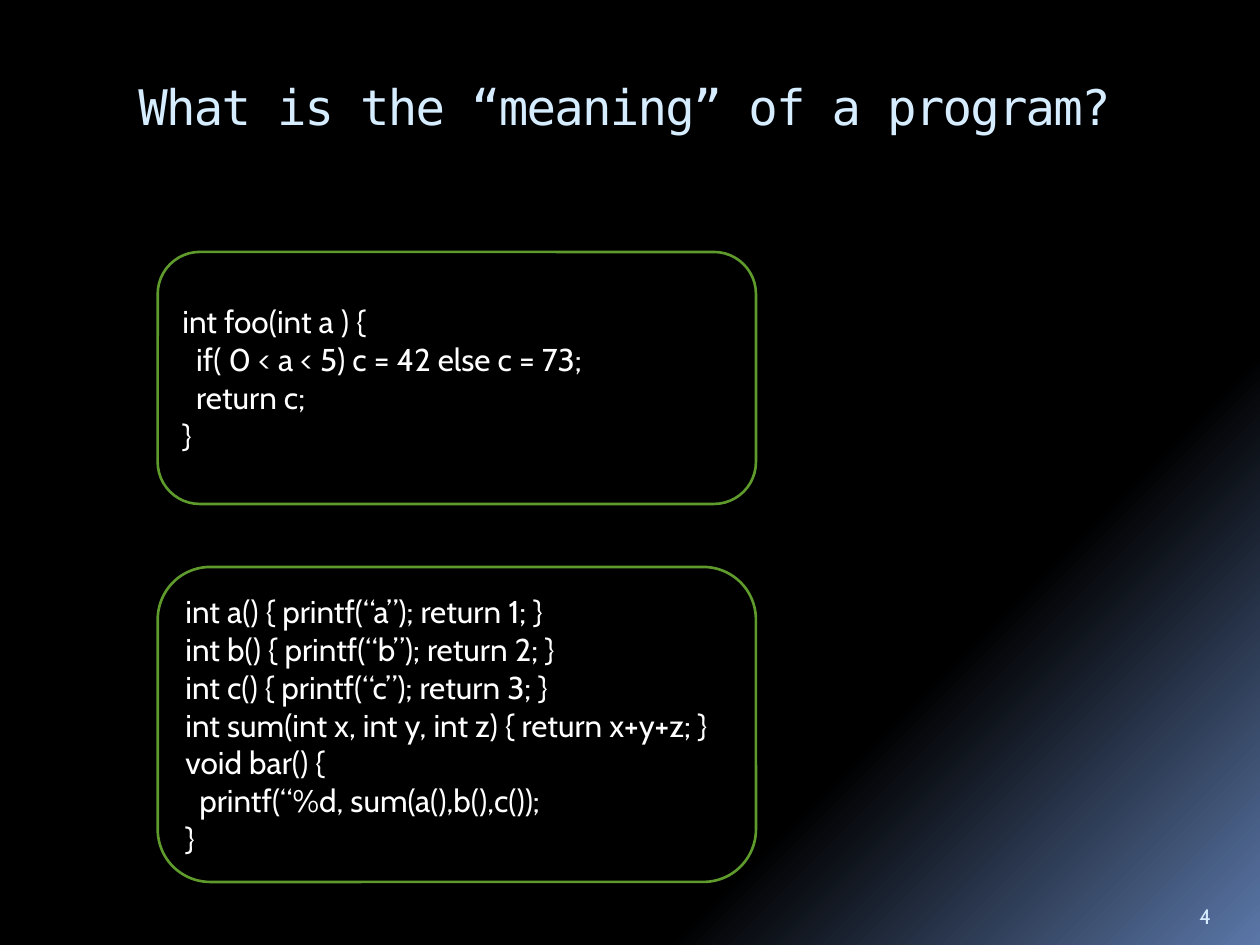
from copy import deepcopy
from dataclasses import dataclass

from pptx import Presentation
from pptx.dml.color import RGBColor
from pptx.enum.shapes import MSO_SHAPE
from pptx.enum.text import MSO_ANCHOR, PP_ALIGN
from pptx.oxml.ns import qn
from pptx.slide import Slide
from pptx.text.text import TextFrame
from pptx.util import Cm, Pt

ROUNDED = MSO_SHAPE.ROUNDED_RECTANGLE
TOP, MIDDLE, BOTTOM = MSO_ANCHOR.TOP, MSO_ANCHOR.MIDDLE, MSO_ANCHOR.BOTTOM
LEFT = PP_ALIGN.LEFT

COLORS = {
    "black": "000000",
    "glow": "5B77A8",
    "heading": "D6ECFF",
    "code": "FFFFFF",
    "border": "5E9B2C",
}
BODY_FONT = "Cabin"
TITLE_FONT = "DejaVu Sans Mono"
BACKGROUND_STOPS = [(0.65, "black"), (0.73, "black"), (1.0, "glow")]
CODE_INDENT = Cm(0.28)


@dataclass
class Box:
    left: float
    top: float
    width: float
    height: float

    def lengths(self) -> list[Cm]:
        return [Cm(value) for value in (self.left, self.top, self.width, self.height)]


@dataclass
class TextStyle:
    font: str
    size: float
    color: str
    anchor: MSO_ANCHOR
    spacing: int = 0  # hundredths of a point


@dataclass
class CodeLine:
    text: str
    level: int = 0


@dataclass
class CodeBlock:
    box: Box
    lines: list[CodeLine]


TITLE_STYLE = TextStyle(TITLE_FONT, 28, "heading", TOP, spacing=-100)
NUMBER_STYLE = TextStyle(BODY_FONT, 12, "heading", BOTTOM)
CODE_STYLE = TextStyle(BODY_FONT, 18, "code", MIDDLE)

CODE_BLOCKS = [
    CodeBlock(Box(3.18, 5.08, 12.06, 5.08), [
        CodeLine("int foo(int a ) {"),
        CodeLine("if( 0 < a < 5) c = 42 else c = 73;", 1),
        CodeLine("return c;", 1),
        CodeLine("}"),
    ]),
    CodeBlock(Box(3.18, 11.43, 12.06, 6.35), [
        CodeLine("int a() { printf(“a”); return 1; }"),
        CodeLine("int b() { printf(“b”); return 2; }"),
        CodeLine("int c() { printf(“c”); return 3; }"),
        CodeLine("int sum(int x, int y, int z) { return x+y+z; }"),
        CodeLine("void bar() {"),
        CodeLine("printf(“%d, sum(a(),b(),c());", 1),
        CodeLine("}"),
    ]),
]


def color(name: str) -> RGBColor:
    return RGBColor.from_string(COLORS[name])


def paint_background(slide: Slide) -> None:
    """Fill the background with a diagonal gradient towards the lower right."""
    fill = slide.background.fill
    fill.gradient()
    fill.gradient_angle = 315
    stop_list = slide.element.find(".//" + qn("a:gsLst"))
    stop_list.append(deepcopy(stop_list[-1]))
    for stop, (position, name) in zip(fill.gradient_stops, BACKGROUND_STOPS):
        stop.position = position
        stop.color.rgb = color(name)


def write_lines(frame: TextFrame, lines: list[CodeLine], style: TextStyle) -> None:
    frame.word_wrap = True
    frame.vertical_anchor = style.anchor
    frame.text = "\n".join(line.text for line in lines)
    for paragraph, line in zip(frame.paragraphs, lines):
        paragraph.alignment = LEFT
        paragraph.font.name = style.font
        paragraph.font.size = Pt(style.size)
        paragraph.font.color.rgb = color(style.color)
        if line.level:
            paragraph._p.get_or_add_pPr().set("marL", str(line.level * CODE_INDENT))
        if style.spacing:
            paragraph.runs[0].font._element.set("spc", str(style.spacing))


def add_text(slide: Slide, box: Box, text: str, style: TextStyle) -> None:
    shape = slide.shapes.add_textbox(*box.lengths())
    write_lines(shape.text_frame, [CodeLine(text)], style)


def add_code_block(slide: Slide, block: CodeBlock) -> None:
    shape = slide.shapes.add_shape(ROUNDED, *block.box.lengths())
    shape.shadow.inherit = False
    shape.fill.background()
    shape.line.color.rgb = color("border")
    shape.line.width = Pt(1.5)
    write_lines(shape.text_frame, block.lines, CODE_STYLE)


def main() -> None:
    presentation = Presentation()
    presentation.slide_width = Cm(25.4)
    presentation.slide_height = Cm(19.05)
    slide = presentation.slides.add_slide(presentation.slide_layouts[6])
    paint_background(slide)
    add_text(slide, Box(2.54, 1.42, 21.59, 2.54),
             "What is the “meaning” of a program?", TITLE_STYLE)
    add_text(slide, Box(23.93, 17.83, 1.27, 1.02), "4", NUMBER_STYLE)
    for block in CODE_BLOCKS:
        add_code_block(slide, block)
    presentation.save("out.pptx")


if __name__ == "__main__":
    main()
